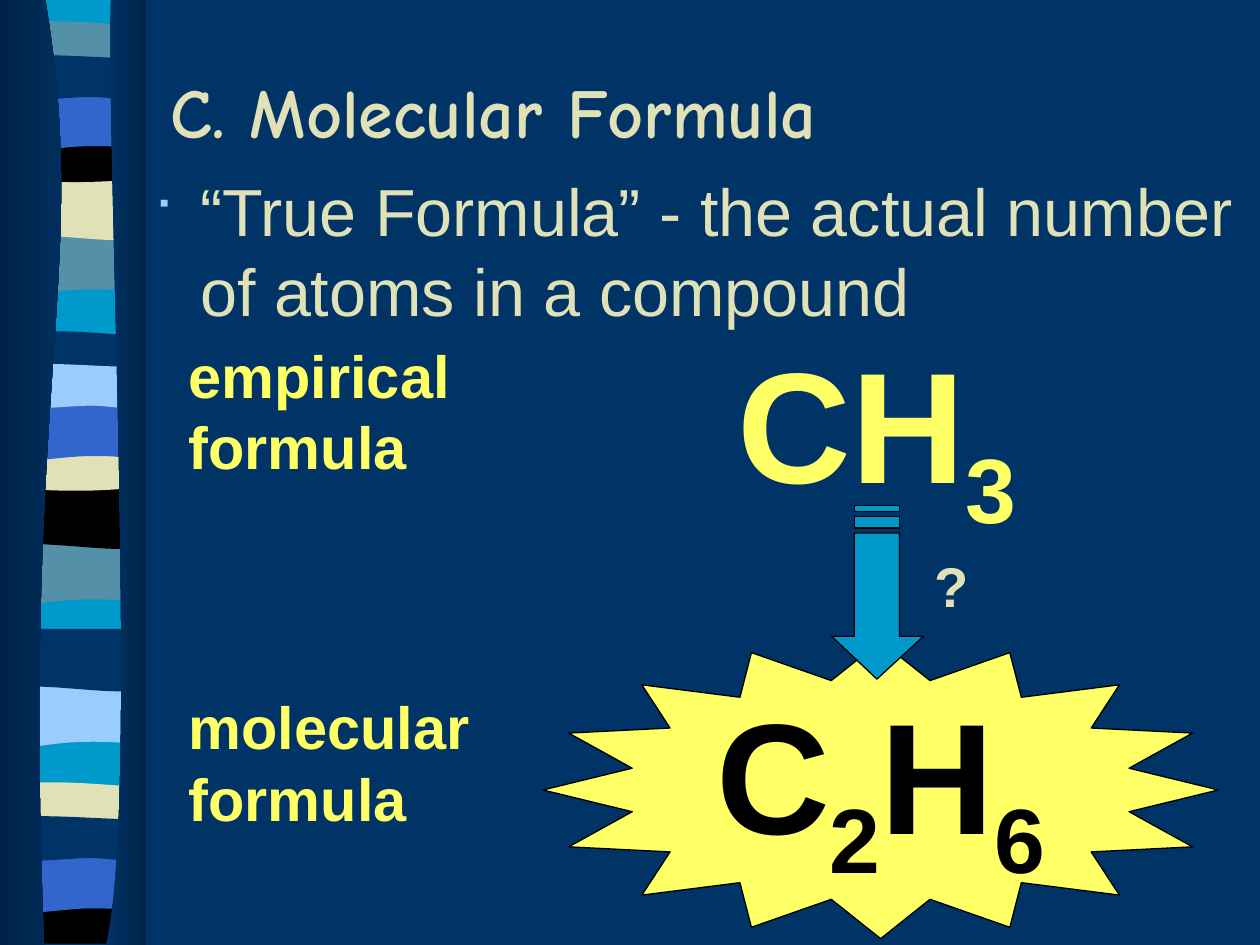
import pptx
import pptx.util
import pptx.dml.color
import pptx.enum.shapes
import pptx.enum.text
import pptx.oxml.ns
from lxml import etree

Inches, Pt, qn = pptx.util.Inches, pptx.util.Pt, pptx.oxml.ns.qn
ALIGN, ANCHOR = pptx.enum.text.PP_ALIGN, pptx.enum.text.MSO_ANCHOR

COLORS = {
    "navy": "003366", "shade": "002449", "cyan": "0099CC", "teal": "5490A8",
    "cream": "E1E1B7", "blue": "3366CC", "sky": "99CCFF", "yellow": "FFFF66",
    "black": "000000",
}

# Ribbon bands: lower edge (right to left) and upper edge (left to right),
# as cubic control points with y measured from the band's own top
LEFT, RIGHT = 0.05, 1.14
FLAT_TOP = [(LEFT, 0)]
WAVES = {
    "swell": ([(RIGHT, 0.47), (0.39, 0.39), (0.24, 0.55), (LEFT, 0.47)], FLAT_TOP),
    "ripple": ([(RIGHT, 0.47), (0.96, 0.55), (0.39, 0.42), (LEFT, 0.47)], FLAT_TOP),
    "thin": ([(RIGHT, 0.24), (0.96, 0.29), (0.24, 0.29), (LEFT, 0.24)],
             [(LEFT, 0), (0.12, -0.05), (0.29, -0.04), (0.47, -0.04),
              (0.65, -0.04), (1, -0.01), (RIGHT, 0)]),
    "bowl": ([(RIGHT, 0.32), (0.96, 0.38), (0.24, 0.38), (LEFT, 0.32)],
             [(LEFT, 0), (0.72, 0.05), (0.91, 0), (RIGHT, 0)]),
    "arch": ([(RIGHT, 0.47), (0.97, 0.42), (0.9, 0.42), (0.72, 0.42),
              (0.54, 0.42), (0.22, 0.47), (LEFT, 0.47)], FLAT_TOP),
    "drift": ([(RIGHT, 0.31), (1.07, 0.36), (0.9, 0.31), (0.72, 0.31),
               (0.54, 0.31), (0.17, 0.36), (LEFT, 0.31)],
              [(LEFT, 0), (0.21, -0.05), (0.79, 0), (0.97, 0),
               (1.15, 0), (1.1, 0), (RIGHT, 0)]),
    "floor": ([(RIGHT, 0.37), (LEFT, 0.37)],
              [(LEFT, 0), (0.72, 0.05), (0.91, 0), (RIGHT, 0)]),
}
BANDS = [
    ("swell", 1.85, "teal"), ("ripple", 1.41, "cream"), ("thin", 0.21, "teal"),
    ("bowl", 1.08, "black"), ("arch", 0.74, "blue"), ("drift", 0.46, "navy"),
    ("swell", 4.31, "teal"), ("ripple", 3.86, "black"), ("thin", 2.67, "navy"),
    ("bowl", 3.53, "cream"), ("arch", 3.2, "blue"), ("drift", 2.91, "sky"),
    ("swell", 5.44, "sky"), ("ripple", 4.99, "navy"), ("thin", 6.25, "cream"),
    ("floor", 7.12, "black"), ("arch", 6.79, "blue"), ("drift", 6.5, "navy"),
]


def segments(controls, top=0):
    """A start point, then groups of three for curves or single points for lines."""
    points = [(x, top + y) for x, y in controls]
    size = 3 if len(points) > 3 else 1
    return [points[:1]] + [points[i:i + size] for i in range(1, len(points), size)]


def rectangle(left, top, right, bottom):
    return segments([(left, top), (right, top)]) + segments([(right, bottom), (left, bottom)])


def rgb(name):
    return pptx.dml.color.RGBColor.from_string(COLORS[name])


class Deck:
    font = "Arial"

    def __init__(self, width, height):
        self.file = pptx.Presentation()
        self.file.slide_width, self.file.slide_height = Inches(width), Inches(height)

    def add_slide(self, background):
        self.slide = self.file.slides.add_slide(self.file.slide_layouts[5])
        self.slide.background.fill.solid()
        self.slide.background.fill.fore_color.rgb = rgb(background)

    def paint(self, shape, fill, outline=None):
        """A pair of colours makes a gradient from left to right."""
        shape.shadow.inherit = False
        if isinstance(fill, tuple):
            shape.fill.gradient()
            shape.fill.gradient_angle = 0
            for stop, name in zip(shape.fill.gradient_stops, fill):
                stop.color.rgb = rgb(name)
        else:
            shape.fill.solid()
            shape.fill.fore_color.rgb = rgb(fill)
        if outline:
            shape.line.color.rgb = rgb(outline)
            shape.line.width = Pt(0.75)
        else:
            shape.line.fill.background()

    def outline(self, contours, fill, outline=None):
        builder = None
        for contour in contours:
            points = [(Inches(x), Inches(y)) for segment in contour for x, y in segment]
            if builder is None:
                builder = self.slide.shapes.build_freeform(*points[0])
            else:
                builder.move_to(*points[0])
            builder.add_line_segments(points[1:], close=True)
        shape = builder.convert_to_shape()
        # Merge each group of three line ends into one cubic curve
        ends = iter(list(shape._element.iter(qn("a:lnTo"))))
        for segment in (s for contour in contours for s in contour[1:]):
            first, *others = [next(ends) for _ in segment]
            if others:
                first.tag = qn("a:cubicBezTo")
                for end in others:
                    first.append(end[0])
                    end.getparent().remove(end)
        self.paint(shape, fill, outline)

    def star(self, box, fill):
        star = self.slide.shapes.add_shape(
            pptx.enum.shapes.MSO_SHAPE.STAR_16_POINT, *map(Inches, box))
        star.adjustments[0] = 0.375
        self.paint(star, fill, "black")

    def style(self, run, size, color, bold, font=None):
        run.font.name = font or self.font
        run.font.size = Pt(size)
        run.font.bold = bold
        run.font.color.rgb = rgb(color)

    def title(self, text, box, size, color, font):
        title = self.slide.shapes.title
        title.left, title.top, title.width, title.height = map(Inches, box)
        frame = title.text_frame
        frame.text = text
        frame.auto_size = pptx.enum.text.MSO_AUTO_SIZE.NONE
        frame.vertical_anchor = ANCHOR.MIDDLE
        frame.paragraphs[0].alignment = ALIGN.LEFT
        self.style(frame.paragraphs[0].runs[0], size, color, True, font)

    def text(self, text, box, size, color, bold=True):
        frame = self.slide.shapes.add_textbox(*map(Inches, box)).text_frame
        frame.word_wrap = True
        frame.text = text
        for paragraph in frame.paragraphs:
            for run in paragraph.runs:
                self.style(run, size, color, bold)
        return frame

    def bullet(self, text, box, size, color, marker):
        paragraph = self.text(text, box, size, color, bold=False).paragraphs[0]
        properties = paragraph._p.get_or_add_pPr()
        properties.set("marL", str(Inches(0.37)))
        properties.set("indent", str(Inches(-0.37)))
        marker_color = etree.SubElement(properties, qn("a:buClr"))
        etree.SubElement(marker_color, qn("a:srgbClr"), val=COLORS[marker])
        etree.SubElement(properties, qn("a:buSzPct"), val="70000")
        etree.SubElement(properties, qn("a:buFont"), typeface="Wingdings")
        etree.SubElement(properties, qn("a:buChar"), char="■")

    def formula(self, symbols, box, color):
        """Digits are set as subscripts."""
        paragraph = self.text("", box, 90, color).paragraphs[0]
        paragraph.alignment = ALIGN.CENTER
        for part in symbols:
            run = paragraph.add_run()
            run.text = part
            self.style(run, 90, color, True)
            if part.isdigit():
                run._r.get_or_add_rPr().set("baseline", "-25000")


def main():
    deck = Deck(10, 7.5)
    deck.add_slide("navy")

    # Ribbon of wavy bands, with a shaded curtain on each side
    deck.outline([rectangle(LEFT, 0, RIGHT, 7.47)], "cyan")
    for wave, top, color in BANDS:
        lower, upper = WAVES[wave]
        deck.outline([[[(RIGHT, top)]] + segments(lower, top) + segments(upper, top)], color)
    left_edge = segments([(0.36, 0), (0.72, 2.16), (0.17, 2.96), (0.35, 7.5)])
    right_edge = segments([(0.88, 0), (0.84, 1.25), (1.11, 6.46), (0.84, 7.5)])
    deck.outline([left_edge + segments([(0, 7.5), (0, 0)])], ("shade", "navy"))
    deck.outline([right_edge + segments([(1.16, 7.5), (1.16, 0)])], ("navy", "shade"))

    # Title and definition
    deck.title("C. Molecular Formula", (1.25, 0.25, 8.75, 1.25), 40, "cream", "Comic Neue")
    deck.bullet("“True Formula” - the actual number of atoms in a compound",
                (1.12, 1.3, 8.88, 1.74), 38, "cream", "sky")

    # Formulas
    deck.formula(["CH", "3"], (5.43, 2.54, 3.06, 1.74), "yellow")
    deck.star((4.31, 5.09, 5.36, 2.36), "yellow")
    deck.formula(["C", "2", "H", "6"], (5.46, 5.32, 3.06, 1.89), "black")

    # Striped arrow from empirical to molecular
    arrow = [[point] for point in (
        (7.33, 5.05), (7.14, 5.05), (7.14, 4.23), (6.78, 4.23),
        (6.78, 5.05), (6.6, 5.05), (6.96, 5.39))]
    stripes = [rectangle(6.78, top, 7.14, bottom)
               for top, bottom in ((4.1, 4.19), (4.01, 4.06))]
    deck.outline([arrow] + stripes, "cyan", "black")

    # Labels
    deck.text("empirical\nformula", (1.4, 2.64, 2.62, 1.45), 34, "yellow")
    deck.text("molecular\nformula", (1.4, 5.43, 2.87, 1.41), 34, "yellow")
    deck.text("?", (7.32, 4.33, 0.6, 0.63), 32, "cream")

    deck.file.save("out.pptx")


if __name__ == "__main__":
    main()
